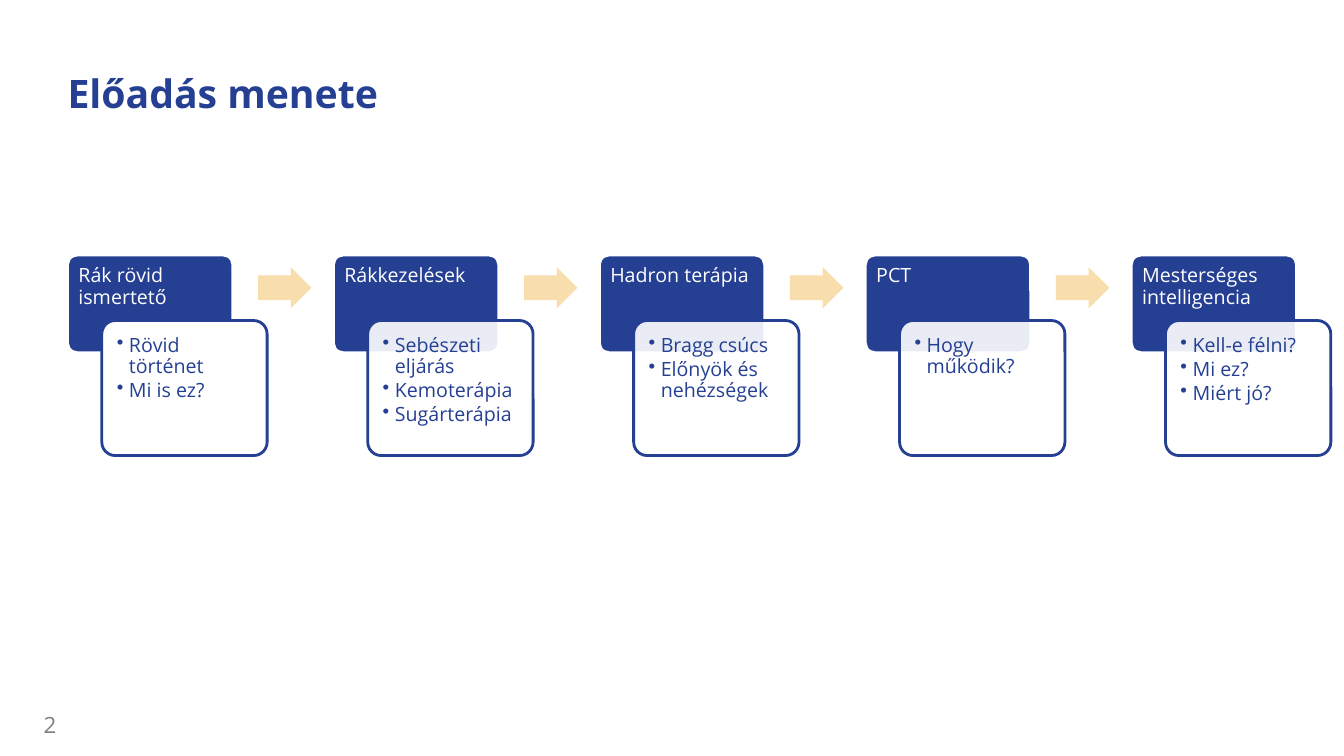
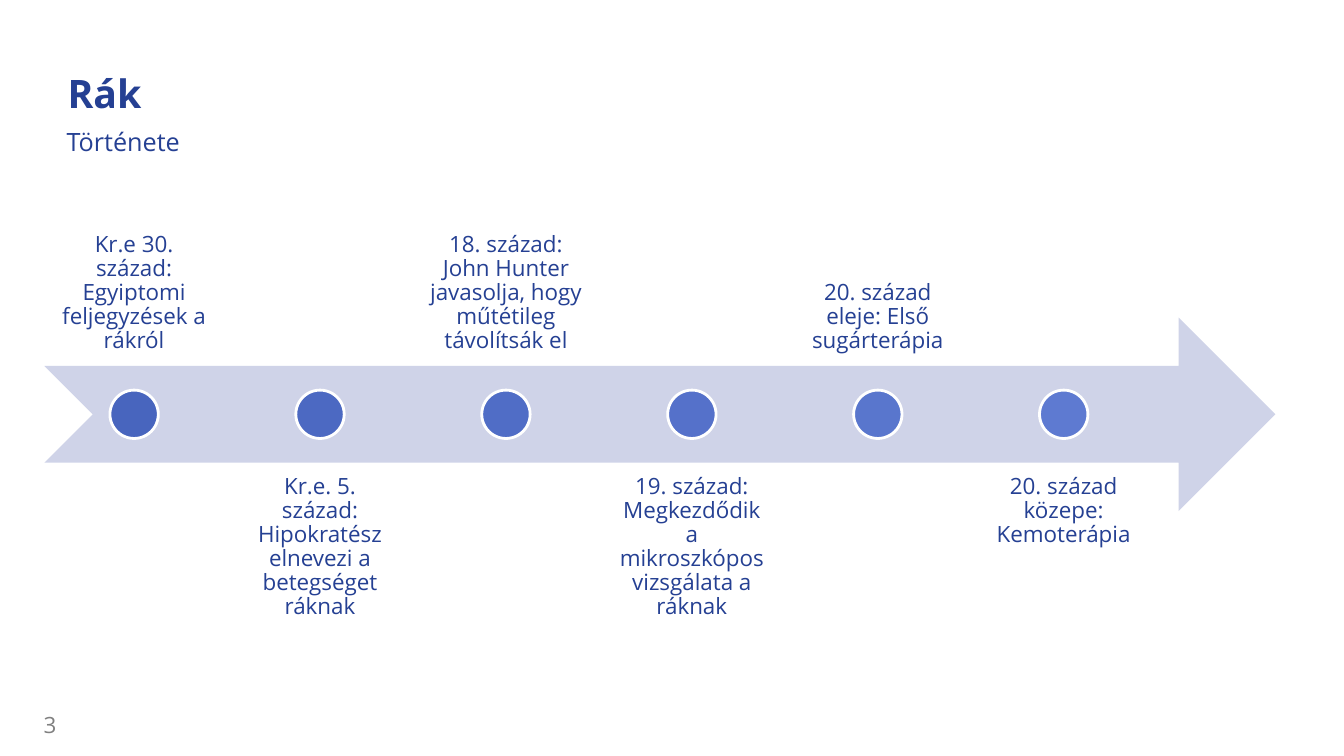
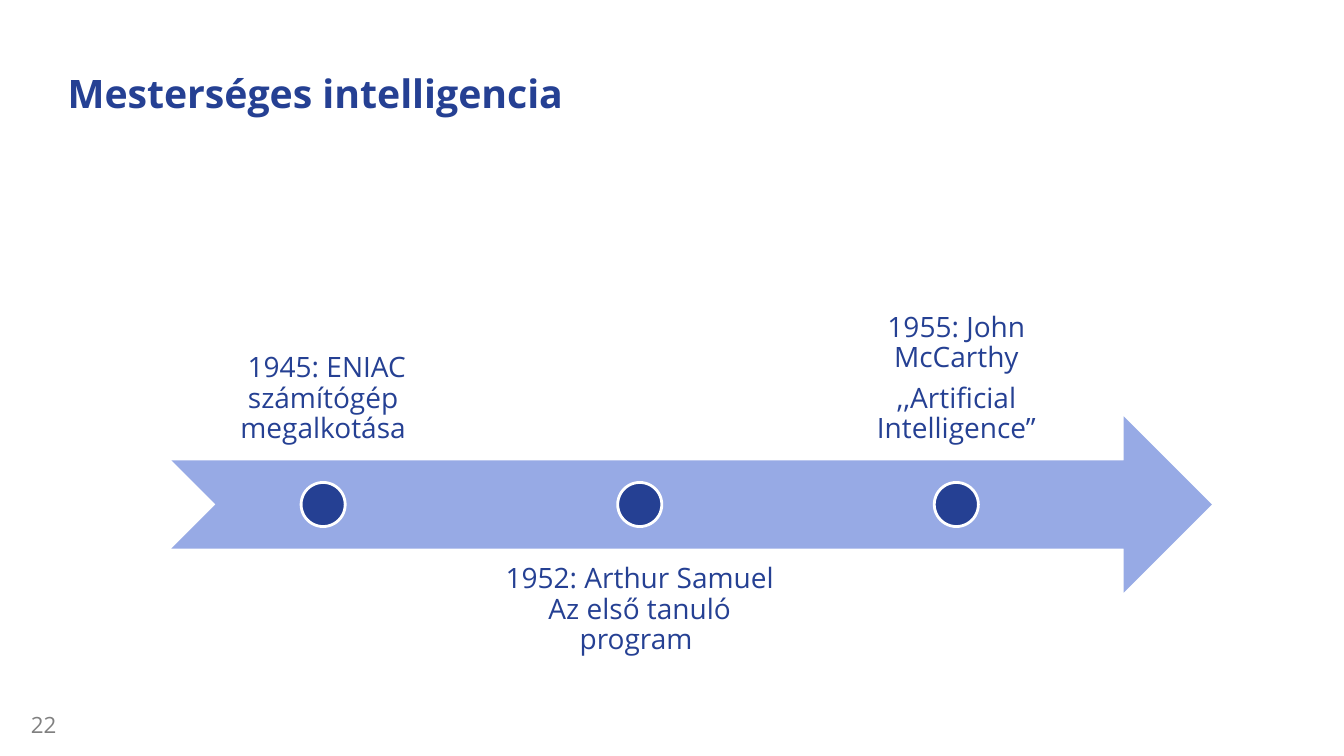
import dataclasses

import lxml.etree
import pptx
import pptx.dml.color
import pptx.enum.shapes
import pptx.enum.text
import pptx.oxml.ns
import pptx.util

Inches = pptx.util.Inches
Pt = pptx.util.Pt
RGB = pptx.dml.color.RGBColor.from_string
SHAPE = pptx.enum.shapes.MSO_SHAPE
ALIGN = pptx.enum.text.PP_ALIGN
ANCHOR = pptx.enum.text.MSO_ANCHOR
qn = pptx.oxml.ns.qn


@dataclasses.dataclass(frozen=True)
class Theme:
    font: str = "Open Sans"
    navy: str = "254093"
    white: str = "FFFFFF"
    grey: str = "808080"
    sand: str = "F7DEAC"
    title_size: int = 28
    subtitle_size: int = 18
    number_size: int = 16
    card_size: int = 14
    outline: int = 2


theme = Theme()


def write(frame, text, size, color, inset=0, align=ALIGN.LEFT, anchor=ANCHOR.TOP,
          after=0, bold=False, bullet=None, spacing=0.9):
    """Fill a text frame; newlines split paragraphs, vertical tabs break lines."""
    frame.text = text
    frame.word_wrap = True
    frame.auto_size = pptx.enum.text.MSO_AUTO_SIZE.NONE
    frame.vertical_anchor = anchor
    frame.margin_left = frame.margin_right = Inches(inset)
    frame.margin_top = frame.margin_bottom = Inches(inset)
    for paragraph in frame.paragraphs:
        properties = paragraph._p.get_or_add_pPr()
        indent = Inches(0.12) if bullet else 0
        properties.set("marL", str(indent))
        properties.set("indent", str(-indent))
        if bullet:
            lxml.etree.SubElement(properties, qn("a:buChar"), char=bullet)
        else:
            lxml.etree.SubElement(properties, qn("a:buNone"))
        paragraph.alignment = align
        paragraph.line_spacing = spacing
        paragraph.space_before = Pt(0)
        paragraph.space_after = Pt(after)
        paragraph.font.name = theme.font
        paragraph.font.size = Pt(size)
        paragraph.font.bold = bold
        paragraph.font.color.rgb = RGB(color)


def add_figure(slide, kind, left, top, width, height, fill, line=None, opacity=100):
    """Add a flat preset shape, lengths in inches."""
    figure = slide.shapes.add_shape(
        kind, Inches(left), Inches(top), Inches(width), Inches(height))
    figure.shadow.inherit = False
    figure.fill.solid()
    figure.fill.fore_color.rgb = RGB(fill)
    if opacity < 100:
        tint = figure.element.spPr.find(qn("a:solidFill")).find(qn("a:srgbClr"))
        lxml.etree.SubElement(tint, qn("a:alpha"), val=str(opacity * 1000))
    if line:
        figure.line.color.rgb = RGB(line)
        figure.line.width = Pt(theme.outline)
    else:
        figure.line.fill.background()
    return figure


deck = pptx.Presentation()
deck.slide_width = Inches(13.33)
deck.slide_height = Inches(7.5)

# Titles, subtitle and slide numbers
slides = []
for title, subtitle, number in [
    ("Előadás menete", None, "2"),
    ("Rák", "Története", "3"),
    ("Mesterséges intelligencia", None, "22"),
]:
    slide = deck.slides.add_slide(deck.slide_layouts[1 if subtitle else 5])
    slides.append(slide)

    heading = slide.shapes.title
    heading.left, heading.top = Inches(0.67), Inches(0.33)
    heading.width, heading.height = Inches(10.75), Inches(0.83)
    write(heading.text_frame, title, theme.title_size, theme.navy,
          anchor=ANCHOR.BOTTOM, bold=True)

    if subtitle:
        subheading = slide.placeholders[1]
        subheading.left, subheading.top = Inches(0.66), Inches(1.29)
        subheading.width, subheading.height = Inches(12), Inches(0.3)
        write(subheading.text_frame, subtitle, theme.subtitle_size, theme.navy)

    page = slide.shapes.add_textbox(
        Inches(0.23), Inches(7.08), Inches(0.33), Inches(0.24))
    write(page.text_frame, number, theme.number_size, theme.grey,
          align=ALIGN.RIGHT, anchor=ANCHOR.BOTTOM, spacing=1)

agenda, cancer_history, ai_history = slides

# Agenda: overlapping topic and detail cards joined by arrows
topics = [
    ("Rák rövid ismertető", "Rövid történet\nMi is ez?"),
    ("Rákkezelések", "Sebészeti eljárás\nKemoterápia\nSugárterápia"),
    ("Hadron terápia", "Bragg csúcs\nElőnyök és nehézségek"),
    ("PCT", "Hogy működik?"),
    ("Mesterséges intelligencia", "Kell-e félni?\nMi ez?\nMiért jó?"),
]
first_left, last_left = 0.67, 11.22
topic_pitch = (last_left - first_left) / (len(topics) - 1)
for index, (topic, details) in enumerate(topics):
    left = first_left + index * topic_pitch
    topic_card = add_figure(agenda, SHAPE.ROUNDED_RECTANGLE, left, 2.53, 1.64, 0.97,
                            theme.navy, theme.white)
    topic_card.adjustments[0] = 0.1
    write(topic_card.text_frame, topic, theme.card_size, theme.white, inset=0.08)

    detail_card = add_figure(agenda, SHAPE.ROUNDED_RECTANGLE, left + 0.34, 3.18, 1.64, 1.34,
                             theme.white, theme.navy, opacity=90 if index else 100)
    detail_card.adjustments[0] = 0.1
    write(detail_card.text_frame, details, theme.card_size, theme.navy,
          inset=0.11, after=2, bullet="•")

    if index < len(topics) - 1:
        step = add_figure(agenda, SHAPE.RIGHT_ARROW, left + 1.89, 2.65, 0.53, 0.41, theme.sand)
        step.adjustments[0] = 0.6

# Timelines: events alternate above and below a notched arrow
timelines = [
    dict(slide=cancer_history, arrow=(0.44, 3.15, 12.21, 1.92), band="CFD3E8",
         first=0.45, last=9.67, width=1.76, inset=0.12, size=16, after=6,
         events=[
             ("Kr.e 30. század: Egyiptomi feljegyzések a rákról", "4865BE"),
             ("Kr.e. 5. század: Hipokratész elnevezi a betegséget ráknak", "4C69C2"),
             ("18. század: John Hunter javasolja, hogy műtétileg távolítsák el", "506DC6"),
             ("19. század: Megkezdődik a mikroszkópos vizsgálata a ráknak", "5571CA"),
             ("20. század eleje: Első sugárterápia", "5976CD"),
             ("20. század közepe: Kemoterápia", "5E7AD1"),
         ]),
    dict(slide=ai_history, arrow=(1.7, 4.13, 10.32, 1.75), band="97AAE5",
         first=1.71, last=7.99, width=2.99, inset=0.16, size=20, after=7,
         events=[
             (" 1945: ENIAC számítógép megalkotása", theme.navy),
             ("1952: Arthur Samuel\vAz első tanuló program ", theme.navy),
             ("1955: John McCarthy\n,,Artificial Intelligence”", theme.navy),
         ]),
]
for timeline in timelines:
    slide, events, width = timeline["slide"], timeline["events"], timeline["width"]
    add_figure(slide, SHAPE.NOTCHED_RIGHT_ARROW, *timeline["arrow"], timeline["band"])
    _, top, _, height = timeline["arrow"]
    dot = height / 4
    pitch = (timeline["last"] - timeline["first"]) / (len(events) - 1)
    for index, (event, color) in enumerate(events):
        left = timeline["first"] + index * pitch
        above = index % 2 == 0
        label_top = top - 3 * dot if above else top + 3 * dot
        label = slide.shapes.add_textbox(
            Inches(left), Inches(label_top), Inches(width), Inches(height))
        write(label.text_frame, event, timeline["size"], theme.navy,
              inset=timeline["inset"], align=ALIGN.CENTER,
              anchor=ANCHOR.BOTTOM if above else ANCHOR.TOP, after=timeline["after"])
        add_figure(slide, SHAPE.OVAL, left + (width - dot) / 2, top + 1.5 * dot, dot, dot,
                   color, theme.white)

deck.save("out.pptx")
